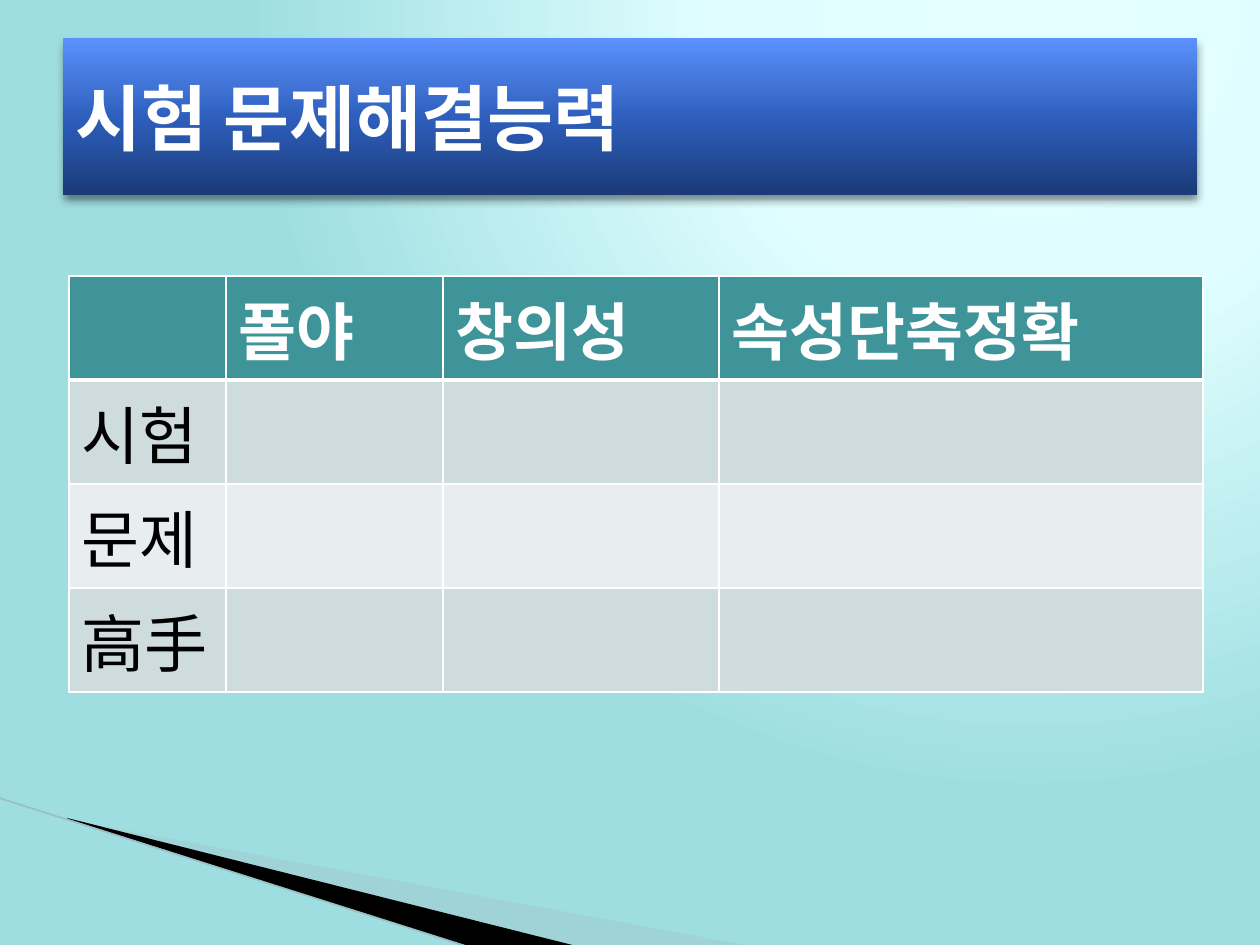
from lxml import etree
from pptx import Presentation, util as u
from pptx.dml.color import RGBColor
from pptx.enum import shapes, text
from pptx.oxml import ns

PX = 914400 / 126
FONT = "Courier New"
WHITE = "FFFFFF"
HEADER = "3F949A"
BANDS = ["CFDCDE", "E8EEEF"]
ROWS = [
    ["", "폴야", "창의성", "속성단축정확"],
    ["시험", "", "", ""],
    ["문제", "", "", ""],
    ["高手", "", "", ""],
]
COLUMN_WIDTHS = [157, 217, 276, 484]
ROW_HEIGHT = 104


def px(length):
    return u.Emu(round(length * PX))


def rgb(color):
    return RGBColor.from_string(color)


def add_xml(parent, tag, **attributes):
    values = {name: str(value) for name, value in attributes.items()}
    return etree.SubElement(parent, ns.qn(tag), values)


def add_color(parent, color, alpha=100):
    node = add_xml(parent, "a:srgbClr", val=color)
    if alpha < 100:
        add_xml(node, "a:alpha", val=alpha * 1000)


def write(frame, content, size=36, color=WHITE, bold=False):
    frame.text = content
    paragraph = frame.paragraphs[0]
    paragraph.alignment = text.PP_ALIGN.LEFT
    font = paragraph.runs[0].font
    font.name, font.size, font.bold = FONT, u.Pt(size), bold
    font.color.rgb = rgb(color)


def start_gradient(fill, owner, stops):
    fill.gradient()
    gradient = owner.find(".//" + ns.qn("a:gradFill"))
    for child in list(gradient):
        gradient.remove(child)
    stop_list = add_xml(gradient, "a:gsLst")
    for position, color in stops:
        add_color(add_xml(stop_list, "a:gs", pos=position * 1000), color)
    return gradient


def paint_background(slide):
    stops = [(0, "E5FEFF"), (40, "E0FEFF"), (100, "9EDEE1")]
    gradient = start_gradient(slide.background.fill, slide.element, stops)
    circle = add_xml(gradient, "a:path", path="circle")
    add_xml(circle, "a:fillToRect", l=65000, t=0, r=0, b=98000)


def add_wedge(slide, points, color, alpha=100):
    builder = slide.shapes.build_freeform(*points[0], scale=PX)
    builder.add_line_segments(points[1:], close=True)
    wedge = builder.convert_to_shape()
    wedge.shadow.inherit = False
    wedge.line.fill.background()
    wedge.fill.solid()
    wedge.fill.fore_color.rgb = rgb(color)
    if alpha < 100:
        solid_color = wedge.element.spPr.find(".//" + ns.qn("a:srgbClr"))
        add_xml(solid_color, "a:alpha", val=alpha * 1000)


def add_edge(slide, start, end, color, width):
    edge = slide.shapes.add_connector(
        shapes.MSO_CONNECTOR.STRAIGHT, *map(px, start + end))
    edge.line.color.rgb = rgb(color)
    edge.line.width = u.Pt(width)
    add_xml(edge.element.spPr, "a:effectLst")


def add_border(cell, side, width):
    border = add_xml(cell._tc.get_or_add_tcPr(), f"a:ln{side}", w=u.Pt(width))
    add_color(add_xml(border, "a:solidFill"), WHITE)


def format_cell(cell, content, row):
    widths = {"L": 1, "R": 1, "T": 3 if row == 1 else 1, "B": 3 if row == 0 else 1}
    for side, width in widths.items():
        add_border(cell, side, width)
    cell.fill.solid()
    cell.fill.fore_color.rgb = rgb(BANDS[(row - 1) % 2] if row else HEADER)
    if content:
        write(cell.text_frame, content, bold=row == 0,
              color="000000" if row else WHITE)


def add_skill_table(slide):
    table = slide.shapes.add_table(
        len(ROWS), len(COLUMN_WIDTHS), px(69), px(276),
        px(sum(COLUMN_WIDTHS)), px(ROW_HEIGHT * len(ROWS))).table
    for column, width in zip(table.columns, COLUMN_WIDTHS):
        column.width = px(width)
    for row, contents in enumerate(ROWS):
        table.rows[row].height = px(ROW_HEIGHT)
        for column, content in enumerate(contents):
            format_cell(table.cell(row, column), content, row)


def format_title(slide, content):
    title = slide.shapes.title
    title.left, title.top, title.width, title.height = map(px, (63, 38, 1134, 157))
    stops = [(0, "1A3A78"), (50, "2E5FBD"), (70, "4174D6"), (100, "5C92FF")]
    gradient = start_gradient(title.fill, title.element, stops)
    add_xml(gradient, "a:lin", ang=270 * 60000, scaled=0)
    effects = add_xml(title.element.spPr, "a:effectLst")
    shadow = add_xml(effects, "a:outerShdw", blurRad=u.Pt(5), dist=u.Pt(3),
                     dir=90 * 60000, rotWithShape=0)
    add_color(shadow, "000000", alpha=45)
    frame = title.text_frame
    write(frame, content, size=41, bold=True)
    frame.word_wrap = True
    frame.auto_size = text.MSO_AUTO_SIZE.NONE
    frame.vertical_anchor = text.MSO_ANCHOR.MIDDLE
    slide.shapes._spTree.append(title.element)


def main():
    deck = Presentation()
    deck.slide_width, deck.slide_height = px(1260), px(945)
    slide = deck.slides.add_slide(deck.slide_layouts[5])
    paint_background(slide)
    add_wedge(slide, [(69, 820), (750, 946), (575, 946), (69, 819)], "A4C4C8", alpha=40)
    add_wedge(slide, [(67, 818), (576, 946), (469, 947), (68, 819)], "000000")
    add_edge(slide, (-1, 798), (469, 947), "9BBEC2", 0.95)
    add_skill_table(slide)
    format_title(slide, "시험 문제해결능력")
    deck.save("out.pptx")


if __name__ == "__main__":
    main()
